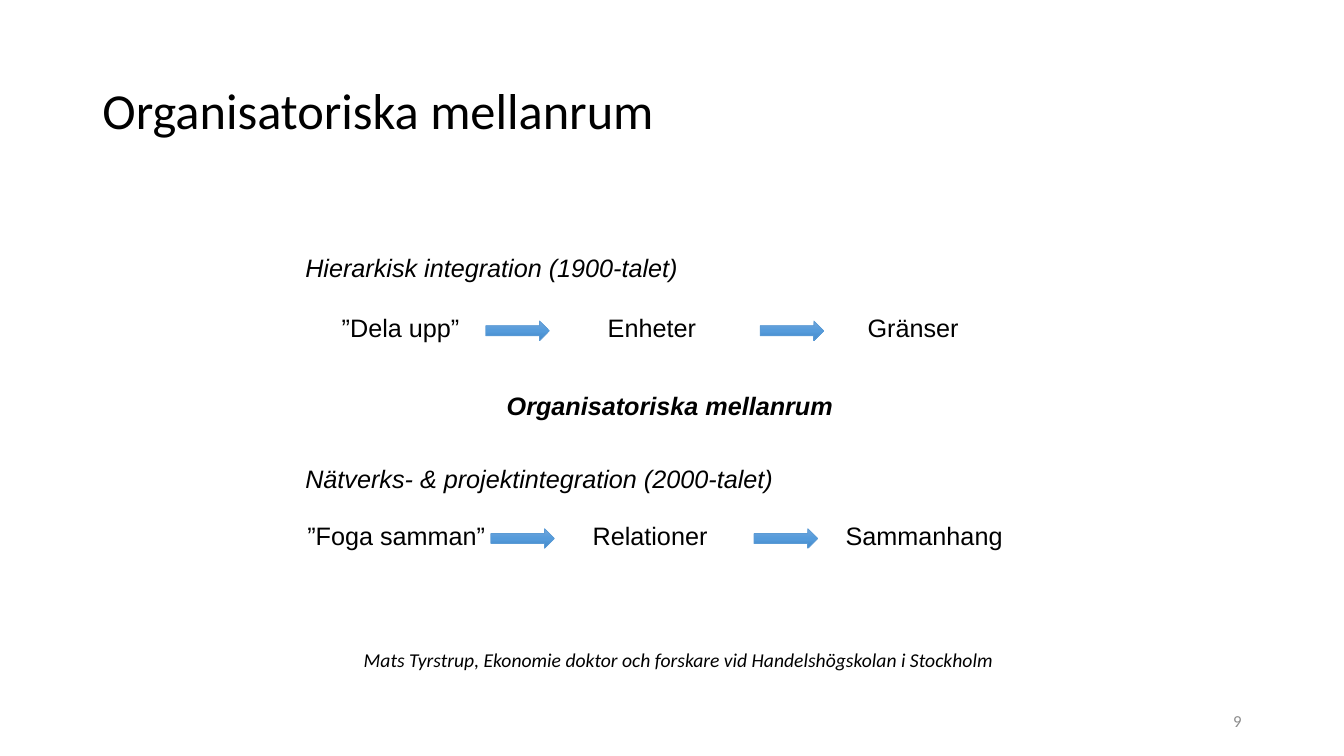
import copy
from dataclasses import dataclass

import pptx
import pptx.dml.color
import pptx.enum.shapes
import pptx.enum.text
import pptx.oxml.ns
import pptx.util

Pt = pptx.util.Pt
RGB = pptx.dml.color.RGBColor.from_string
Align = pptx.enum.text.PP_ALIGN
Anchor = pptx.enum.text.MSO_ANCHOR
AutoSize = pptx.enum.text.MSO_AUTO_SIZE


@dataclass(frozen=True)
class Theme:
    heading_font: str = "Calibri"
    diagram_font: str = "Arial"
    ink: str = "000000"
    muted: str = "8C8C8C"
    arrow_line: str = "5B9BD5"
    arrow_stops: tuple = ((0, "71A6DB"), (0.5, "559BDB"), (1, "448ACA"))
    title_size: float = 36
    diagram_size: float = 18
    credit_size: float = 14
    number_size: float = 12


class SlideBuilder:
    def __init__(self, slide, theme):
        self.slide = slide
        self.theme = theme

    def set_text(self, shape, text, align, color, **font_format):
        """Fill a shape with one formatted paragraph."""
        paragraph = shape.text_frame.paragraphs[0]
        paragraph.text = text
        paragraph.alignment = align
        font = paragraph.runs[0].font
        for attribute, value in font_format.items():
            setattr(font, attribute, value)
        font.color.rgb = RGB(color)
        return paragraph

    def title(self, text, left, top, width, height):
        heading = self.slide.shapes.title
        place = {"left": left, "top": top, "width": width, "height": height}
        for attribute, value in place.items():
            setattr(heading, attribute, Pt(value))
        heading.text_frame.auto_size = AutoSize.NONE
        heading.text_frame.vertical_anchor = Anchor.MIDDLE
        paragraph = self.set_text(heading, text, Align.LEFT, self.theme.ink,
                                  name=self.theme.heading_font,
                                  size=Pt(self.theme.title_size))
        paragraph.line_spacing = 0.9

    def text(self, text, left, top, width, height, wrap=True,
             anchor=Anchor.TOP, align=Align.LEFT, color=None, **font_format):
        box = self.slide.shapes.add_textbox(Pt(left), Pt(top), Pt(width), Pt(height))
        box.text_frame.word_wrap = wrap
        box.text_frame.vertical_anchor = anchor
        self.set_text(box, text, align, color or self.theme.ink, **font_format)

    def label(self, text, left, top, width, **options):
        """Add a one-line text of the diagram."""
        self.text(text, left, top, width, 29, wrap=False,
                  name=self.theme.diagram_font,
                  size=Pt(self.theme.diagram_size), **options)

    def arrow(self, left, top):
        arrow = self.slide.shapes.add_shape(
            pptx.enum.shapes.MSO_SHAPE.RIGHT_ARROW, Pt(left), Pt(top), Pt(45.4), Pt(14))
        arrow.shadow.inherit = False
        arrow.fill.gradient()
        stop_list = arrow.element.find(".//" + pptx.oxml.ns.qn("a:gsLst"))
        stop_list.append(copy.deepcopy(stop_list[-1]))
        for stop, (position, color) in zip(arrow.fill.gradient_stops, self.theme.arrow_stops):
            stop.position = position
            stop.color.rgb = RGB(color)
        arrow.fill.gradient_angle = 270
        arrow.line.color.rgb = RGB(self.theme.arrow_line)
        arrow.line.width = Pt(0.5)

    def chain(self, top, steps, arrow_lefts):
        """Add a row of steps with the arrows between them."""
        for text, left, width in steps:
            self.label(text, left, top, width)
        for left in arrow_lefts:
            self.arrow(left, top + 9.7)


def main():
    theme = Theme()
    deck = pptx.Presentation()
    deck.slide_width, deck.slide_height = Pt(960), Pt(540)
    builder = SlideBuilder(deck.slides.add_slide(deck.slide_layouts[5]), theme)

    builder.title("Organisatoriska mellanrum", 66, 28.8, 828, 104.4)

    builder.label("Hierarkisk integration (1900-talet)", 211, 177, 283, italic=True)
    builder.chain(219.6, [("”Dela upp”", 237, 99.4),
                          ("Enheter", 427, 78.5),
                          ("Gränser", 612.7, 80)], (347, 543))

    builder.label("Organisatoriska mellanrum", 353.5, 275, 250,
                  align=Align.CENTER, bold=True, italic=True)

    builder.label("Nätverks- & projektintegration (2000-talet)", 211, 327.6, 352, italic=True)
    builder.chain(368, [("”Foga samman”", 212.4, 142.6),
                        ("Relationer", 416.2, 97.2),
                        ("Sammanhang", 597, 127.4)], (350.6, 538.6))

    builder.text("Mats Tyrstrup, Ekonomie doktor och forskare vid Handelshögskolan i Stockholm",
                 252.7, 459.4, 514.8, 24.5, name=theme.heading_font,
                 size=Pt(theme.credit_size), italic=True)
    builder.text("9", 678, 500.4, 216, 28.8, anchor=Anchor.MIDDLE, align=Align.RIGHT,
                 color=theme.muted, name=theme.heading_font, size=Pt(theme.number_size))

    deck.save("out.pptx")


if __name__ == "__main__":
    main()
